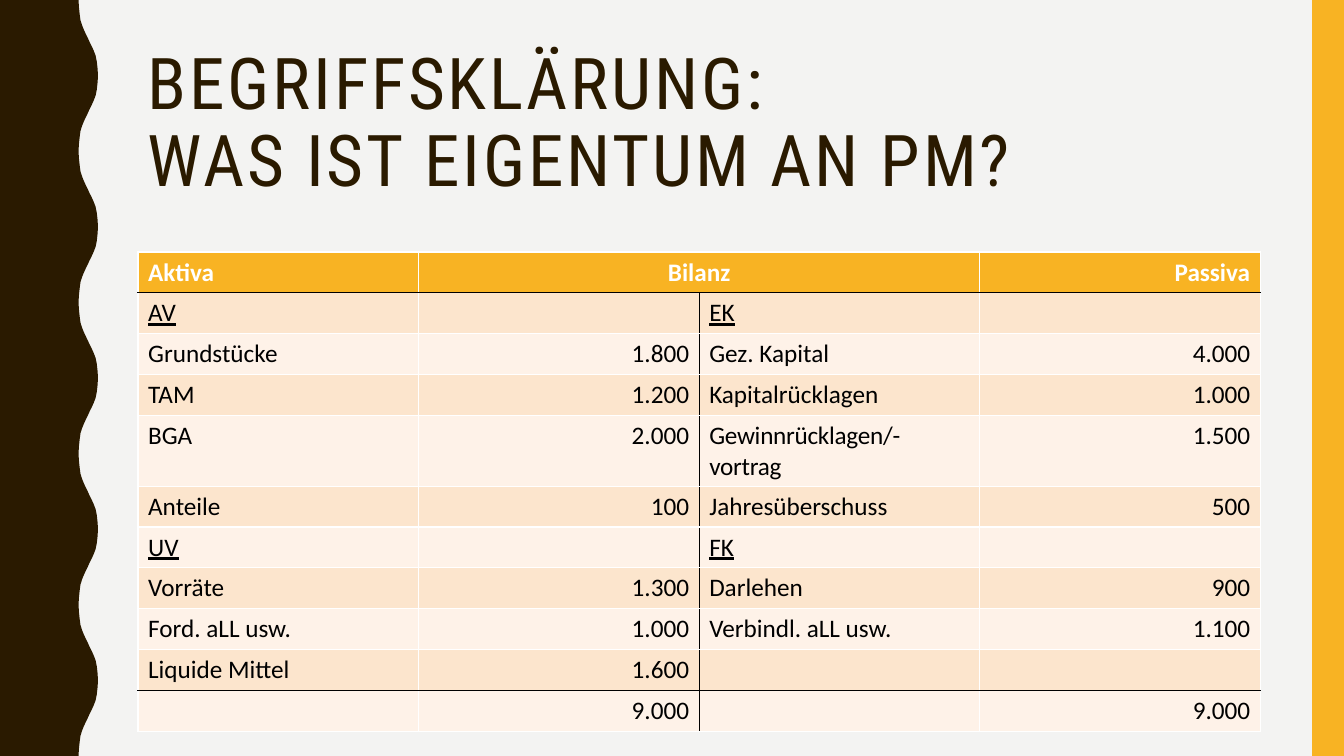
from lxml import etree
from pptx import Presentation
from pptx.dml.color import RGBColor
from pptx.enum.shapes import MSO_SHAPE
from pptx.enum.text import MSO_ANCHOR, PP_ALIGN
from pptx.oxml.ns import qn
from pptx.util import Cm, Pt

LEFT, CENTER, RIGHT = PP_ALIGN.LEFT, PP_ALIGN.CENTER, PP_ALIGN.RIGHT
MIDDLE = MSO_ANCHOR.MIDDLE
RECTANGLE = MSO_SHAPE.RECTANGLE

BROWN, YELLOW, BACKGROUND = "2A1A00", "F8B323", "F3F3F2"
WHITE, BLACK = "FFFFFF", "000000"
BANDS = ("FEF2E8", "FCE5CD")

TITLE_LINES = ["BEGRIFFSKLÄRUNG:", "WAS IST EIGENTUM AN PM?"]
BALANCE_SHEET = [
    ("Aktiva", "Bilanz", "", "Passiva"),
    ("AV", "", "EK", ""),
    ("Grundstücke", "1.800", "Gez. Kapital", "4.000"),
    ("TAM", "1.200", "Kapitalrücklagen", "1.000"),
    ("BGA", "2.000", "Gewinnrücklagen/-vortrag", "1.500"),
    ("Anteile", "100", "Jahresüberschuss", "500"),
    ("UV", "", "FK", ""),
    ("Vorräte", "1.300", "Darlehen", "900"),
    ("Ford. aLL usw.", "1.000", "Verbindl. aLL usw.", "1.100"),
    ("Liquide Mittel", "1.600", "", ""),
    ("", "9.000", "", "9.000"),
]
GROUP_HEADINGS = {"AV", "EK", "UV", "FK"}
TIGHT_LABEL = "Gewinnrücklagen/-vortrag"
HEADER_ROW, TOTAL_ROW = 0, len(BALANCE_SHEET) - 1
PASSIVA_COLUMN = 2

SLIDE_WIDTH, SLIDE_HEIGHT = 33.87, 19.05
TABLE_LEFT, TABLE_TOP, COLUMN_WIDTH, ROW_HEIGHT = 3.48, 6.35, 7.07, 1.03
STRIPE_WIDTH = 0.8

# Rising half of one wave as (x, y) in cm; the falling half mirrors it
WAVE_COUNT = 5
WAVE_PERIOD = SLIDE_HEIGHT / WAVE_COUNT
HALF_WAVE = [
    (1.98, 0), (1.99, 0.18), (2.01, 0.36), (2.03, 0.51), (2.07, 0.64),
    (2.11, 0.74), (2.16, 0.85), (2.21, 0.95), (2.26, 1.06), (2.31, 1.16),
    (2.36, 1.27), (2.41, 1.4), (2.44, 1.55), (2.46, 1.73), (2.47, 1.9),
]


def rgb(hex_color):
    return RGBColor.from_string(hex_color)


def paint(shape, color):
    shape.fill.solid()
    shape.fill.fore_color.rgb = rgb(color)
    shape.line.fill.background()
    shape.shadow.inherit = False


def add_run(paragraph, text, font_name, size, color, spacing=0):
    """Add a run; spacing is the letter spacing in points."""
    run = paragraph.add_run()
    run.text = text
    run.font.name = font_name
    run.font.size = Pt(size)
    run.font.color.rgb = rgb(color)
    if spacing:
        run.font._element.set("spc", str(round(spacing * 100)))
    return run


def add_wave(slide):
    wave = HALF_WAVE + [(x, WAVE_PERIOD - y) for x, y in reversed(HALF_WAVE)]
    edge = [(x, y + number * WAVE_PERIOD)
            for number in range(WAVE_COUNT) for x, y in wave]
    builder = slide.shapes.build_freeform(0, 0)
    builder.add_line_segments(
        [(Cm(x), Cm(y)) for x, y in edge + [(0, SLIDE_HEIGHT)]], close=True)
    paint(builder.convert_to_shape(), BROWN)


def add_title(slide):
    box = slide.shapes.add_textbox(Cm(3.48), Cm(1.07), Cm(28.27), Cm(4.14))
    frame = box.text_frame
    frame.word_wrap = True
    frame.vertical_anchor = MIDDLE
    paragraph = frame.paragraphs[0]
    paragraph.line_spacing = 0.9
    for number, line in enumerate(TITLE_LINES):
        if number:
            paragraph.add_line_break()
        add_run(paragraph, line, "Roboto Condensed", 51, BROWN, spacing=2)


def set_borders(cell, row, column):
    """Black lines below the header, above the totals and between the sides."""
    black_rules = {
        "a:lnL": row > HEADER_ROW and column == PASSIVA_COLUMN,
        "a:lnR": row > HEADER_ROW and column == PASSIVA_COLUMN - 1,
        "a:lnT": row in (HEADER_ROW + 1, TOTAL_ROW),
        "a:lnB": row in (HEADER_ROW, TOTAL_ROW - 1),
    }
    properties = cell._tc.get_or_add_tcPr()
    for tag, is_black in black_rules.items():
        line = etree.SubElement(properties, qn(tag), w=str(Pt(1)))
        fill = etree.SubElement(line, qn("a:solidFill"))
        etree.SubElement(fill, qn("a:srgbClr"), val=BLACK if is_black else WHITE)


def fill_cell(cell, text, row, column):
    is_header = row == HEADER_ROW
    set_borders(cell, row, column)
    cell.fill.solid()
    cell.fill.fore_color.rgb = rgb(YELLOW if is_header else BANDS[row % 2])
    if not text:
        return
    paragraph = cell.text_frame.paragraphs[0]
    if is_header and column == 1:
        paragraph.alignment = CENTER
    else:
        paragraph.alignment = RIGHT if column % 2 else LEFT
    run = add_run(paragraph, text, "Calibri", 18, WHITE if is_header else BLACK,
                  spacing=-0.2 if text == TIGHT_LABEL else 0)
    run.font.bold = is_header
    run.font.underline = text in GROUP_HEADINGS


def add_balance_sheet(slide):
    row_count, column_count = len(BALANCE_SHEET), len(BALANCE_SHEET[0])
    table = slide.shapes.add_table(
        row_count, column_count, Cm(TABLE_LEFT), Cm(TABLE_TOP),
        Cm(COLUMN_WIDTH * column_count), Cm(ROW_HEIGHT * row_count)).table
    table.cell(HEADER_ROW, 1).merge(table.cell(HEADER_ROW, 2))
    for row, texts in enumerate(BALANCE_SHEET):
        for column, text in enumerate(texts):
            fill_cell(table.cell(row, column), text, row, column)


def main():
    presentation = Presentation()
    presentation.slide_width = Cm(SLIDE_WIDTH)
    presentation.slide_height = Cm(SLIDE_HEIGHT)
    slide = presentation.slides.add_slide(presentation.slide_layouts[6])
    slide.background.fill.solid()
    slide.background.fill.fore_color.rgb = rgb(BACKGROUND)
    add_wave(slide)
    stripe = slide.shapes.add_shape(
        RECTANGLE, Cm(SLIDE_WIDTH - STRIPE_WIDTH), 0,
        Cm(STRIPE_WIDTH), Cm(SLIDE_HEIGHT))
    paint(stripe, YELLOW)
    add_title(slide)
    add_balance_sheet(slide)
    presentation.save("out.pptx")


if __name__ == "__main__":
    main()
